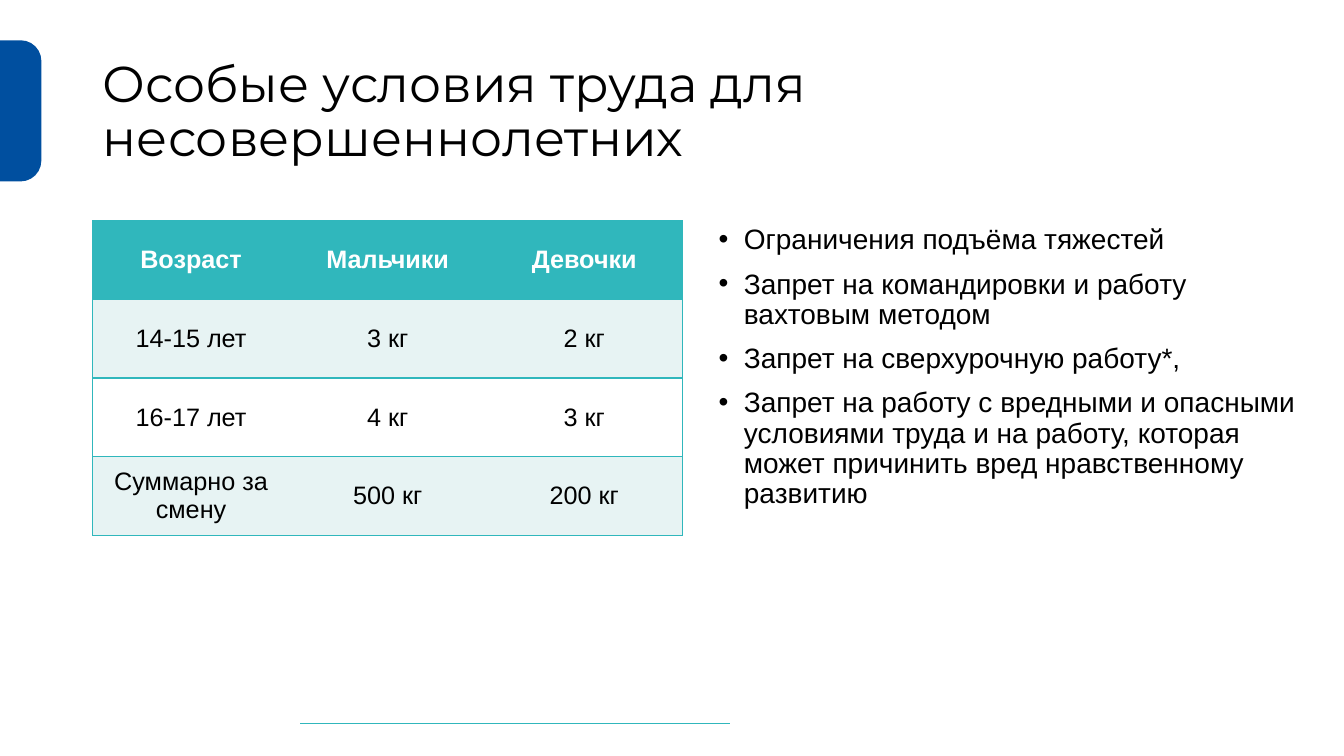
import lxml.etree
import pptx
import pptx.dml.color
import pptx.enum.shapes
import pptx.enum.text
import pptx.oxml.ns
import pptx.util

RGBColor = pptx.dml.color.RGBColor
BLUE = RGBColor(0x00, 0x4F, 0x9F)
TEAL = RGBColor(0x30, 0xB7, 0xBC)
PALE = RGBColor(0xE7, 0xF3, 0xF3)
WHITE = RGBColor(0xFF, 0xFF, 0xFF)
BLACK = RGBColor(0x00, 0x00, 0x00)
ALIGN = pptx.enum.text.PP_ALIGN
MIDDLE = pptx.enum.text.MSO_ANCHOR.MIDDLE
Inches = pptx.util.Inches

WIDTH, HEIGHT = 13.33, 7.5
LEFT, TOP = 0.92, 2.19
TAB_BOX = (0, 0.4, 0.41, 1.4)
TITLE_BOX = (LEFT, 0.4, 11.5, 1.45)
TABLE_BOX = (LEFT, TOP, 5.85, 3.12)
LIST_BOX = (7.03, TOP, 5.96, 4.4)
RULE_BOX = (2.98, 7.18, 4.26, 0)

TITLE = "Особые условия труда для несовершеннолетних"
LIMITS = [
    ("Возраст", "Мальчики", "Девочки"),
    ("14-15 лет", "3 кг", "2 кг"),
    ("16-17 лет", "4 кг", "3 кг"),
    ("Суммарно за смену", "500 кг", "200 кг"),
]
RESTRICTIONS = [
    "Ограничения подъёма тяжестей",
    "Запрет на командировки и работу вахтовым методом",
    "Запрет на сверхурочную работу*,",
    "Запрет на работу с вредными и опасными условиями труда и на работу, "
    "которая может причинить вред нравственному развитию",
]


def add_element(parent, tag, **attributes):
    """Append a DrawingML element to the parent and return it."""
    return lxml.etree.SubElement(parent, pptx.oxml.ns.qn(tag), attributes)


def write_text(para, text, size, font="Arial", color=BLACK, bold=False,
               align=ALIGN.LEFT, spacing=None, before=0):
    """Put one formatted span of text into a paragraph."""
    para.alignment = align
    para.line_spacing = spacing
    para.space_before = pptx.util.Pt(before)
    span = para.add_run()
    span.text = text
    span.font.name = font
    span.font.size = pptx.util.Pt(size)
    span.font.bold = bold
    span.font.color.rgb = color


def add_decoration(page, tab_box, rule_box):
    """Draw the blue side tab and the thin bottom rule."""
    left, top, width, height = tab_box
    tab = page.shapes.add_shape(
        pptx.enum.shapes.MSO_SHAPE.ROUND_2_SAME_RECTANGLE,
        Inches(left + (width - height) / 2), Inches(top + (height - width) / 2),
        Inches(height), Inches(width))
    tab.rotation = 90
    tab.adjustments[0] = 0.5
    tab.shadow.inherit = False
    tab.fill.solid()
    tab.fill.fore_color.rgb = BLUE
    tab.line.fill.background()

    left, top, width, height = rule_box
    rule = page.shapes.add_connector(
        pptx.enum.shapes.MSO_CONNECTOR.STRAIGHT,
        Inches(left), Inches(top), Inches(left + width), Inches(top + height))
    rule.line.color.rgb = TEAL
    rule.line.width = pptx.util.Pt(0.75)
    add_element(rule._element.spPr, "a:effectLst")


def fill_title(page, box):
    """Place and format the title placeholder."""
    title = page.shapes.title
    title.left, title.top, title.width, title.height = map(Inches, box)
    frame = title.text_frame
    frame.word_wrap = True
    frame.auto_size = pptx.enum.text.MSO_AUTO_SIZE.NONE
    frame.vertical_anchor = MIDDLE
    write_text(frame.paragraphs[0], TITLE, 36, font="Montserrat", spacing=0.9)


def set_borders(cell, visible_sides):
    """Draw teal borders on the visible sides and clear the others."""
    properties = cell._tc.get_or_add_tcPr()
    for side in "LRTB":
        border = add_element(properties, f"a:ln{side}", w=str(pptx.util.Pt(1)))
        if side in visible_sides:
            paint = add_element(border, "a:solidFill")
            add_element(paint, "a:srgbClr", val=str(TEAL))
        else:
            add_element(border, "a:noFill")


def add_limits_table(page, box):
    """Add the table of weight limits by age."""
    count = len(LIMITS[0])
    table = page.shapes.add_table(len(LIMITS), count, *map(Inches, box)).table
    for row, values in enumerate(LIMITS):
        header = row == 0
        for column, value in enumerate(values):
            cell = table.cell(row, column)
            sides = "TB" + "L" * (column == 0) + "R" * (column == count - 1)
            set_borders(cell, sides)
            cell.fill.solid()
            cell.fill.fore_color.rgb = TEAL if header else PALE if row % 2 else WHITE
            cell.vertical_anchor = MIDDLE
            write_text(cell.text_frame.paragraphs[0], value, 18, bold=header,
                       color=WHITE if header else BLACK, align=ALIGN.CENTER)


def add_restrictions(page, box):
    """Add the bulleted list of restrictions."""
    frame = page.shapes.add_textbox(*map(Inches, box)).text_frame
    frame.word_wrap = True
    for index, text in enumerate(RESTRICTIONS):
        para = frame.add_paragraph() if index else frame.paragraphs[0]
        write_text(para, text, 20, spacing=0.9, before=10 if index else 0)
        properties = para._p.get_or_add_pPr()
        properties.set("marL", str(Inches(0.25)))
        properties.set("indent", str(-Inches(0.25)))
        paint = add_element(properties, "a:buClr")
        add_element(paint, "a:srgbClr", val=str(BLACK))
        add_element(properties, "a:buFont", typeface="Arial")
        add_element(properties, "a:buChar", char="•")


def main():
    """Build and save the slide."""
    deck = pptx.Presentation()
    deck.slide_width, deck.slide_height = Inches(WIDTH), Inches(HEIGHT)
    page = deck.slides.add_slide(deck.slide_layouts.get_by_name("Title Only"))
    add_decoration(page, TAB_BOX, RULE_BOX)
    fill_title(page, TITLE_BOX)
    add_restrictions(page, LIST_BOX)
    add_limits_table(page, TABLE_BOX)
    deck.save("out.pptx")


if __name__ == "__main__":
    main()
